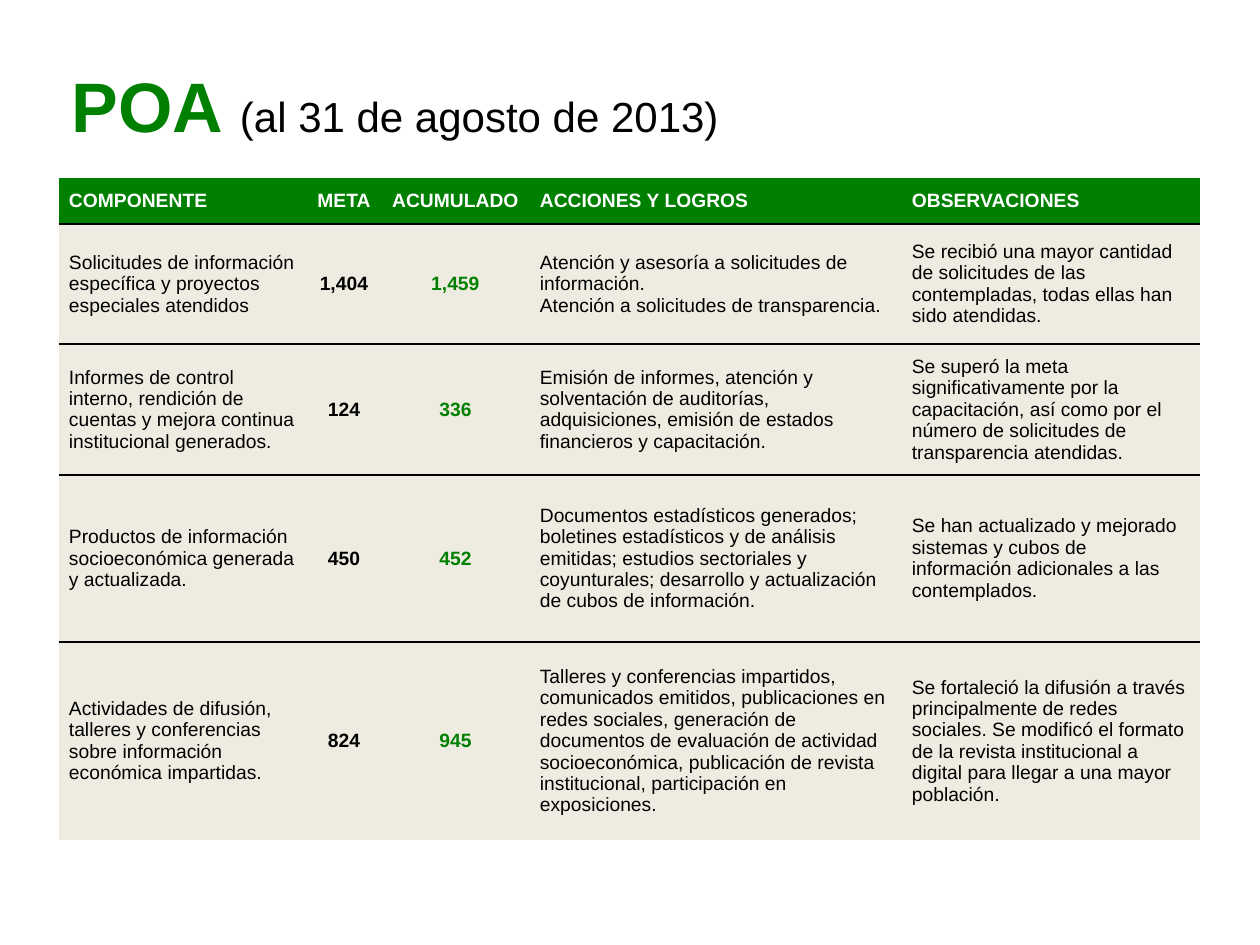
from lxml import etree
from pptx import Presentation, util as u
from pptx.dml.color import RGBColor
from pptx.enum import text
from pptx.oxml.ns import qn

TITLE = [("POA ", "heading"), ("(al 31 de agosto de 2013)", "subheading")]
HEADERS = ["COMPONENTE", "META", "ACUMULADO", "ACCIONES Y LOGROS", "OBSERVACIONES"]
COMPONENTS = [
    ("Solicitudes de información específica y proyectos especiales atendidos",
     "1,404", "1,459",
     "Atención y asesoría a solicitudes de información.\n"
     "Atención a solicitudes de transparencia.",
     "Se recibió una mayor cantidad de solicitudes de las contempladas, "
     "todas ellas han sido atendidas."),
    ("Informes de control interno, rendición de cuentas y mejora continua "
     "institucional generados.",
     "124", "336",
     "Emisión de informes, atención y solventación de auditorías, adquisiciones, "
     "emisión de estados financieros y capacitación.",
     "Se superó la meta significativamente por la capacitación, así como por el "
     "número de solicitudes de transparencia atendidas."),
    ("Productos de información socioeconómica generada y actualizada.",
     "450", "452",
     "Documentos estadísticos generados; boletines estadísticos y de análisis "
     "emitidas; estudios sectoriales y coyunturales; desarrollo y actualización "
     "de cubos de información.",
     "Se han actualizado y mejorado sistemas y cubos de información adicionales "
     "a las contemplados."),
    ("Actividades de difusión, talleres y conferencias sobre información "
     "económica impartidas.",
     "824", "945",
     "Talleres y conferencias impartidos, comunicados emitidos, publicaciones en "
     "redes sociales, generación de documentos de evaluación de actividad "
     "socioeconómica, publicación de revista institucional, participación en "
     "exposiciones.",
     "Se fortaleció la difusión a través principalmente de redes sociales. Se "
     "modificó el formato de la revista institucional a digital para llegar a "
     "una mayor población."),
]

GREEN, BLACK, WHITE, SAND = "008000", "000000", "FFFFFF", "EEECE1"
THEME = {
    "font": "Arial",
    "header_fill": GREEN,
    "body_fill": SAND,
    "rule": BLACK,
    "rule_width": u.Pt(1),
    "heading": {"size": 40, "color": GREEN, "bold": True},
    "subheading": {"size": 24, "color": BLACK, "bold": False},
    "header": {"size": 11, "color": WHITE, "bold": True},
    "body": {"size": 11, "color": BLACK, "bold": False},
    "goal": {"size": 11, "color": BLACK, "bold": True},
    "result": {"size": 11, "color": GREEN, "bold": True},
}
COLUMN_STYLES = ["body", "goal", "result", "body", "body"]
CENTERED = {"goal", "result"}
NO_STYLE = "{2D5ABB26-0587-4C30-8999-92F81FD0307C}"

EMU_PER_PX = u.Inches(1) / 126
SLIDE_SIZE = (1260, 945)
TITLE_BOX = (59, 42, 1126, 147)
TABLE_ORIGIN = (59, 178)
COLUMN_WIDTHS = [248, 74, 149, 372, 298]
ROW_HEIGHTS = [46, 120, 131, 167, 198]
CELL_INSET = 10


def px(value):
    return u.Emu(round(value * EMU_PER_PX))


def apply(target, values):
    for name, value in values.items():
        setattr(target, name, value)


def format_font(font, style):
    values = THEME[style]
    apply(font, {"name": THEME["font"], "size": u.Pt(values["size"]), "bold": values["bold"]})
    font.color.rgb = RGBColor.from_string(values["color"])


def add_bottom_rule(cell):
    properties = cell._tc.get_or_add_tcPr()
    line = etree.SubElement(properties, qn("a:lnB"), w=str(THEME["rule_width"]))
    fill = etree.SubElement(line, qn("a:solidFill"))
    etree.SubElement(fill, qn("a:srgbClr"), val=THEME["rule"])


def add_title(slide):
    title = slide.shapes.title
    apply(title, dict(zip(("left", "top", "width", "height"), map(px, TITLE_BOX))))
    apply(title.text_frame, {"vertical_anchor": text.MSO_ANCHOR.MIDDLE,
                             "auto_size": text.MSO_AUTO_SIZE.NONE, "word_wrap": True})
    paragraph = title.text_frame.paragraphs[0]
    apply(paragraph, {"alignment": text.PP_ALIGN.LEFT, "line_spacing": u.Pt(36)})
    for wording, style in TITLE:
        run = paragraph.add_run()
        run.text = wording
        format_font(run.font, style)


def fill_cell(cell, wording, style, centered, fill, ruled):
    cell.text = wording
    apply(cell, {"vertical_anchor": text.MSO_ANCHOR.MIDDLE,
                 "margin_left": px(CELL_INSET), "margin_right": px(CELL_INSET),
                 "margin_top": 0, "margin_bottom": 0})
    if ruled:
        add_bottom_rule(cell)
    cell.fill.solid()
    cell.fill.fore_color.rgb = RGBColor.from_string(fill)
    for paragraph in cell.text_frame.paragraphs:
        paragraph.alignment = text.PP_ALIGN.CENTER if centered else text.PP_ALIGN.LEFT
        for run in paragraph.runs:
            format_font(run.font, style)


def add_component_table(slide):
    rows = [HEADERS, *COMPONENTS]
    size = (sum(COLUMN_WIDTHS), sum(ROW_HEIGHTS))
    table = slide.shapes.add_table(
        len(rows), len(HEADERS), *map(px, TABLE_ORIGIN + size)).table
    table._tbl.tblPr.find(qn("a:tableStyleId")).text = NO_STYLE
    table.horz_banding = False
    for column, width in zip(table.columns, COLUMN_WIDTHS):
        column.width = px(width)
    for row, height in zip(table.rows, ROW_HEIGHTS):
        row.height = px(height)
    for row_index, row in enumerate(rows):
        is_header = row_index == 0
        fill = THEME["header_fill" if is_header else "body_fill"]
        for column_index, (wording, style) in enumerate(zip(row, COLUMN_STYLES)):
            fill_cell(table.cell(row_index, column_index), wording,
                      "header" if is_header else style, style in CENTERED,
                      fill, row_index < len(rows) - 1)


def main():
    presentation = Presentation()
    width, height = map(px, SLIDE_SIZE)
    apply(presentation, {"slide_width": width, "slide_height": height})
    slide = presentation.slides.add_slide(presentation.slide_layouts.get_by_name("Title Only"))
    add_title(slide)
    add_component_table(slide)
    presentation.save("out.pptx")


if __name__ == "__main__":
    main()
